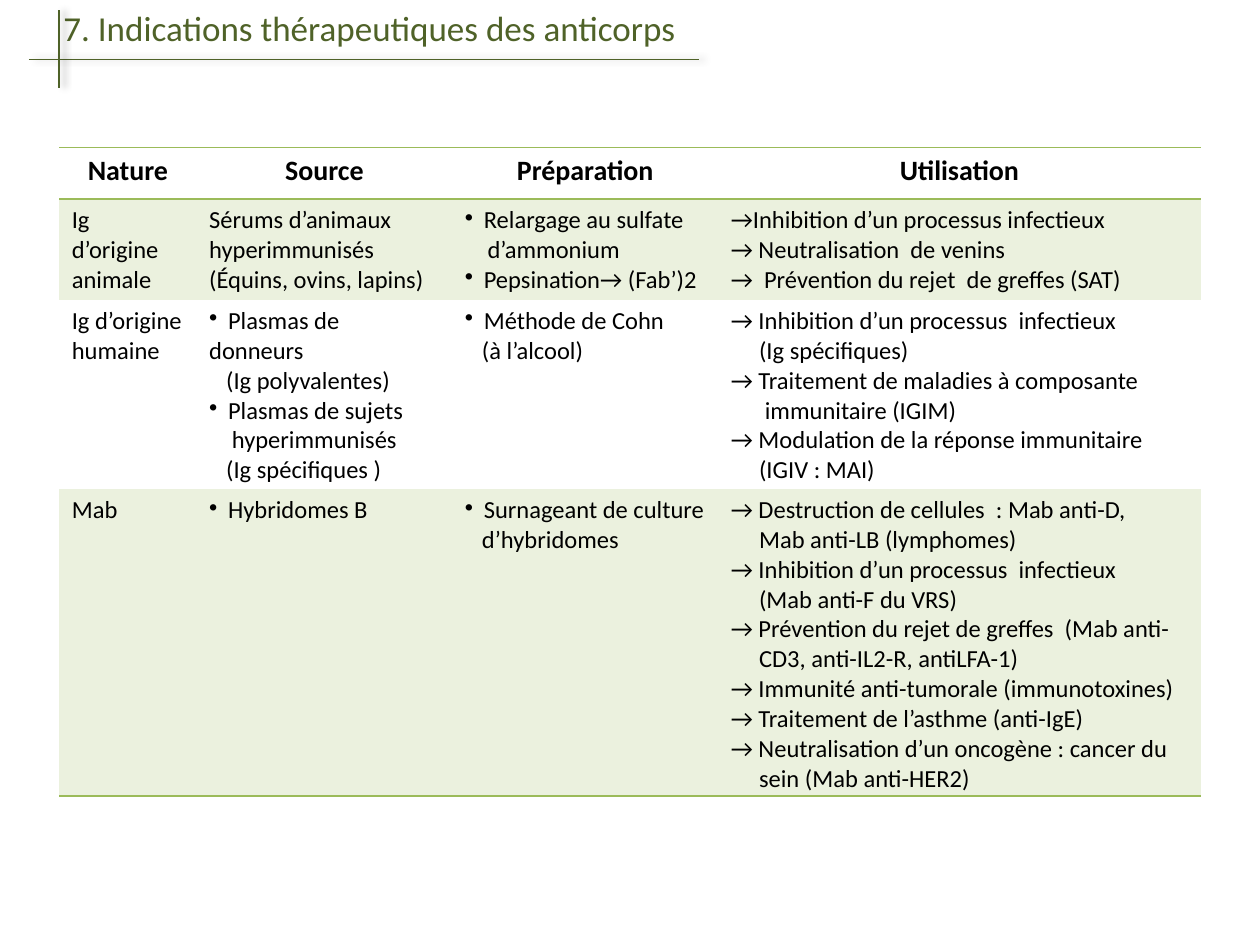
import pptx
import pptx.util
import pptx.dml.color
import pptx.enum.shapes
import pptx.enum.text
import pptx.oxml
import pptx.oxml.ns

Inches, Pt = pptx.util.Inches, pptx.util.Pt
CENTER = pptx.enum.text.PP_ALIGN.CENTER
NS = pptx.oxml.ns.nsdecls("a")
GREEN, DARK, PALE = "9BBB59", "4F6228", "EBF1DE"
SPACE = 0.045  # width of one step of indent, in inches


def color(code):
    return pptx.dml.color.RGBColor.from_string(code)


def write(para, text, size, code="000000", bold=False):
    """Add text to a paragraph, one run for each line."""
    for i, part in enumerate(text.split("\n")):
        if i:
            para.add_line_break()
        run = para.add_run()
        run.text = part
        run.font.name, run.font.size, run.font.bold = "Calibri", Pt(size), bold
        run.font.color.rgb = color(code)


deck = pptx.Presentation()
deck.slide_width, deck.slide_height = Inches(10), Inches(7.5)
slide = deck.slides.add_slide(deck.slide_layouts[6])

# Title with its crossed rules
title = slide.shapes.add_textbox(Inches(0.31), 0, Inches(5.31), Inches(0.44))
title.text_frame.word_wrap = True
head = title.text_frame.paragraphs[0]
head.alignment = CENTER
write(head, "7. Indications thérapeutiques des anticorps ", 20, DARK)

for x1, y1, x2, y2, width in [(0.23, 0.47, 5.55, 0.47, 0.25),
                              (0.47, 0.08, 0.47, 0.7, 0.9)]:
    rule = slide.shapes.add_connector(
        pptx.enum.shapes.MSO_CONNECTOR.STRAIGHT,
        Inches(x1), Inches(y1), Inches(x2), Inches(y2))
    rule.line.color.rgb = color(DARK)
    rule.line.width = Pt(width)
    rule.element.spPr.append(pptx.oxml.parse_xml(
        f'<a:effectLst {NS}><a:outerShdw blurRad="{Pt(4)}" dist="{Pt(3)}" dir="0">'
        '<a:srgbClr val="000000"><a:alpha val="40000"/></a:srgbClr>'
        '</a:outerShdw></a:effectLst>'))

# Each cell is a list of lines; a pair gives the indent steps, then the text
rows = [
    [["Nature"], ["Source"], ["Préparation"], ["Utilisation"]],
    [["Ig\nd’origine\nanimale"],
     ["Sérums d’animaux\nhyperimmunisés", "(Équins, ovins, lapins)"],
     ["•Relargage au sulfate", (4, "d’ammonium"), "•Pepsination→ (Fab’)2"],
     ["→Inhibition d’un processus infectieux",
      "→ Neutralisation  de venins",
      "→  Prévention du rejet  de greffes (SAT)"]],
    [["Ig d’origine humaine"],
     ["•Plasmas de", "donneurs", (3, "(Ig polyvalentes)"),
      "•Plasmas de sujets", (4, "hyperimmunisés"), (3, "(Ig spécifiques )")],
     ["•Méthode de Cohn", (3, "(à l’alcool)")],
     ["→ Inhibition d’un processus  infectieux", (5, "(Ig spécifiques)"),
      "→ Traitement de maladies à composante", (6, "immunitaire (IGIM)"),
      "→ Modulation de la réponse immunitaire", (5, "(IGIV : MAI)")]],
    [["Mab"],
     ["•Hybridomes B"],
     ["•Surnageant de culture", (3, "d’hybridomes")],
     ["→ Destruction de cellules  : Mab anti-D,", (5, "Mab anti-LB (lymphomes)"),
      "→ Inhibition d’un processus  infectieux", (5, "(Mab anti-F du VRS)"),
      "→ Prévention du rejet de greffes  (Mab anti-",
      (5, "CD3, anti-IL2-R, antiLFA-1)"),
      "→ Immunité anti-tumorale (immunotoxines)",
      "→ Traitement de l’asthme (anti-IgE)",
      "→ Neutralisation d’un oncogène : cancer du",
      (5, "sein (Mab anti-HER2)")]],
]
wide = [1.09, 2.03, 2.11, 3.83]
high = [0.41, 0.8, 1.5, 2.43]
edges = {0: ["lnT", "lnB"], 3: ["lnB"]}

frame = slide.shapes.add_table(4, 4, Inches(0.47), Inches(1.17),
                               Inches(sum(wide)), Inches(sum(high)))
table = frame.table
table.first_row = table.horz_banding = False
# The style without fills or grid
table._tbl.tblPr[0].text = "{2D5ABB26-0587-4C30-8999-92F81FD0307C}"
for col, size in zip(table.columns, wide):
    col.width = Inches(size)
for row, size in zip(table.rows, high):
    row.height = Inches(size)

for r, row in enumerate(rows):
    for c, lines in enumerate(row):
        cell = table.cell(r, c)
        props = cell._tc.get_or_add_tcPr()
        for edge in edges.get(r, []):
            props.append(pptx.oxml.parse_xml(
                f'<a:{edge} {NS} w="{Pt(1)}"><a:solidFill>'
                f'<a:srgbClr val="{GREEN}"/></a:solidFill></a:{edge}>'))
        if r % 2:
            cell.fill.solid()
            cell.fill.fore_color.rgb = color(PALE)
        else:
            cell.fill.background()
        for i, line in enumerate(lines):
            step, text = (0, line) if isinstance(line, str) else line
            para = cell.text_frame.add_paragraph() if i else cell.text_frame.paragraphs[0]
            form = para._p.get_or_add_pPr()
            form.set("marL", str(Inches(step * SPACE)))
            if text[0] == "•":
                text = text[1:]
                form.set("marL", str(Inches(0.15)))
                form.set("indent", str(Inches(-0.15)))
                form.append(pptx.oxml.parse_xml(f'<a:buChar {NS} char="•"/>'))
            if r == 0:
                para.alignment = CENTER
            write(para, text, 14 if r else 16, bold=r == 0)

deck.save("out.pptx")
